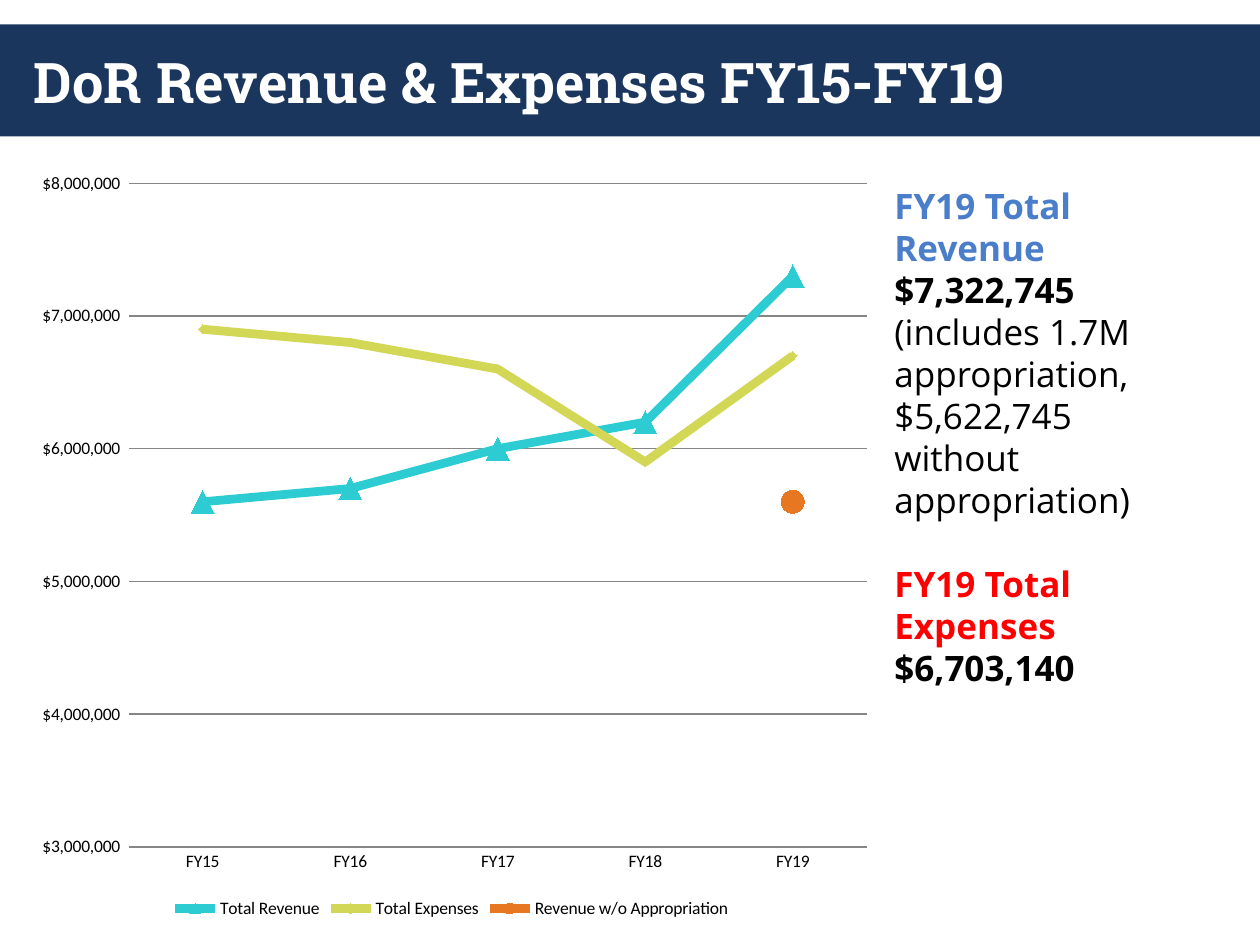
from dataclasses import dataclass

from lxml import etree
from pptx import Presentation
from pptx.chart.data import CategoryChartData
from pptx.dml.color import RGBColor
from pptx.enum.chart import (XL_CHART_TYPE, XL_LEGEND_POSITION,
                             XL_MARKER_STYLE, XL_TICK_MARK)
from pptx.enum.shapes import MSO_SHAPE
from pptx.enum.text import MSO_ANCHOR, PP_ALIGN
from pptx.oxml.ns import qn
from pptx.util import Cm, Pt

LINE = XL_CHART_TYPE.LINE_MARKERS
BOTTOM = XL_LEGEND_POSITION.BOTTOM
NO_TICK = XL_TICK_MARK.NONE
TRIANGLE, DIAMOND, CIRCLE = (XL_MARKER_STYLE.TRIANGLE, XL_MARKER_STYLE.DIAMOND,
                             XL_MARKER_STYLE.CIRCLE)
RECT = MSO_SHAPE.RECTANGLE
MIDDLE, LEFT = MSO_ANCHOR.MIDDLE, PP_ALIGN.LEFT


@dataclass(frozen=True)
class Theme:
    navy: str = "1B365D"
    white: str = "FFFFFF"
    black: str = "000000"
    blue: str = "4A7ECA"
    red: str = "FF0000"
    teal: str = "2DCCD3"
    lime: str = "D2D755"
    orange: str = "E87722"
    grid: str = "868686"
    head: str = "Roboto Slab"
    body: str = "Open Sans"
    label: str = "Calibri"
    head_size: int = 32
    body_size: int = 20
    label_size: int = 10
    lead: int = 24


THEME = Theme()
YEARS = [f"FY{year}" for year in range(15, 20)]
# Name, values, colour, marker style, marker size
SERIES = [
    ("Total Revenue", [5600000, 5700000, 6000000, 6200000, 7300000],
     THEME.teal, TRIANGLE, 13),
    ("Total Expenses", [6900000, 6800000, 6600000, 5900000, 6700000],
     THEME.lime, DIAMOND, 5),
    ("Revenue w/o Appropriation", [None] * 4 + [5600000],
     THEME.orange, CIRCLE, 13),
]
# Each paragraph: space before, then runs of text, colour, bold
NOTES = [
    (0, [("FY19 Total Revenue ", THEME.blue, True),
         ("$7,322,745", THEME.black, True)]),
    (0, [("(includes 1.7M appropriation, $5,622,745 without appropriation)",
          THEME.black, False)]),
    (THEME.lead, [("FY19 Total Expenses ", THEME.red, True),
                  ("$6,703,140", THEME.black, True)]),
]


def apply(target, values):
    for name, value in values.items():
        setattr(target, name, value)


def style(font, name, size, color, bold=False):
    apply(font, {"name": name, "size": Pt(size), "bold": bold})
    font.color.rgb = RGBColor.from_string(color)


def paint(fill, color):
    fill.solid()
    fill.fore_color.rgb = RGBColor.from_string(color)


def stroke(line, color, width):
    paint(line.fill, color)
    line.width = Pt(width)


def add_head(slide, left, top, width, height):
    # Band behind the title
    band = slide.shapes.add_shape(RECT, left, top, width, height)
    band.shadow.inherit = False
    paint(band.fill, THEME.navy)
    band.line.fill.background()
    slide.shapes._spTree.insert(2, band._element)

    # Title text
    title = slide.shapes.title
    inset = Cm(0.43)
    apply(title, {"left": left + inset, "top": top,
                  "width": width - 2 * inset, "height": height + Cm(0.03)})
    frame = title.text_frame
    frame.text = "DoR Revenue & Expenses FY15-FY19"
    apply(frame, {"vertical_anchor": MIDDLE, "word_wrap": True})
    para = frame.paragraphs[0]
    para.alignment = LEFT
    style(para.runs[0].font, THEME.head, THEME.head_size, THEME.white, True)


def set_plot(chart, **box):
    # Fix the inner plot area as shares of the chart
    area = chart._chartSpace.chart.plotArea
    for old in area.findall(qn("c:layout")):
        area.remove(old)
    layout = etree.Element(qn("c:layout"))
    area.insert(0, layout)
    manual = etree.SubElement(layout, qn("c:manualLayout"))
    parts = {"layoutTarget": "inner", "xMode": "edge", "yMode": "edge", **box}
    for name, value in parts.items():
        etree.SubElement(manual, qn(f"c:{name}")).set("val", str(value))


def add_trend(slide, *box):
    data = CategoryChartData()
    data.categories = YEARS
    for name, values, *_ in SERIES:
        data.add_series(name, values)
    chart = slide.shapes.add_chart(LINE, *box, data).chart
    style(chart.font, THEME.label, THEME.label_size, THEME.black)
    apply(chart, {"has_title": False, "has_legend": True})
    apply(chart.legend, {"position": BOTTOM, "include_in_layout": False})
    chart.plots[0].vary_by_categories = False
    set_plot(chart, x=1 / 8, y=1 / 30, w=6 / 7, h=13 / 15)

    # Axes
    ticks = {"major_tick_mark": NO_TICK, "minor_tick_mark": NO_TICK}
    years, money = chart.category_axis, chart.value_axis
    apply(years, ticks)
    stroke(years.format.line, THEME.grid, 0.75)
    apply(money, {**ticks, "minimum_scale": 3000000, "maximum_scale": 8000000,
                  "major_unit": 1000000, "has_major_gridlines": True})
    apply(money.tick_labels, {"number_format": '"$"#,##0_)',
                              "number_format_is_linked": False})
    money.format.line.fill.background()
    stroke(money.major_gridlines.format.line, THEME.grid, 0.75)

    # Lines and markers
    for line, (_, _, color, mark, size) in zip(chart.series, SERIES):
        line.smooth = False
        stroke(line.format.line, color, 5)
        apply(line.marker, {"style": mark, "size": size})
        paint(line.marker.format.fill, color)
        line.marker.format.line.fill.background()


def add_notes(slide, *box):
    frame = slide.shapes.add_textbox(*box).text_frame
    frame.word_wrap = True
    for index, (gap, runs) in enumerate(NOTES):
        para = frame.add_paragraph() if index else frame.paragraphs[0]
        apply(para, {"line_spacing": Pt(THEME.lead), "space_before": Pt(gap)})
        for text, color, bold in runs:
            run = para.add_run()
            run.text = text
            style(run.font, THEME.body, THEME.body_size, color, bold)


def main():
    deck = Presentation()
    apply(deck, {"slide_width": Cm(25.4), "slide_height": Cm(19.05)})
    slide = deck.slides.add_slide(deck.slide_layouts.get_by_name("Title Only"))
    add_head(slide, 0, Cm(0.49), deck.slide_width, Cm(2.26))
    add_trend(slide, Cm(0.43), Cm(3.18), Cm(17.35), Cm(15.44))
    add_notes(slide, Cm(17.78), Cm(3.59), Cm(6.15), Cm(10.52))
    deck.save("out.pptx")


if __name__ == "__main__":
    main()
